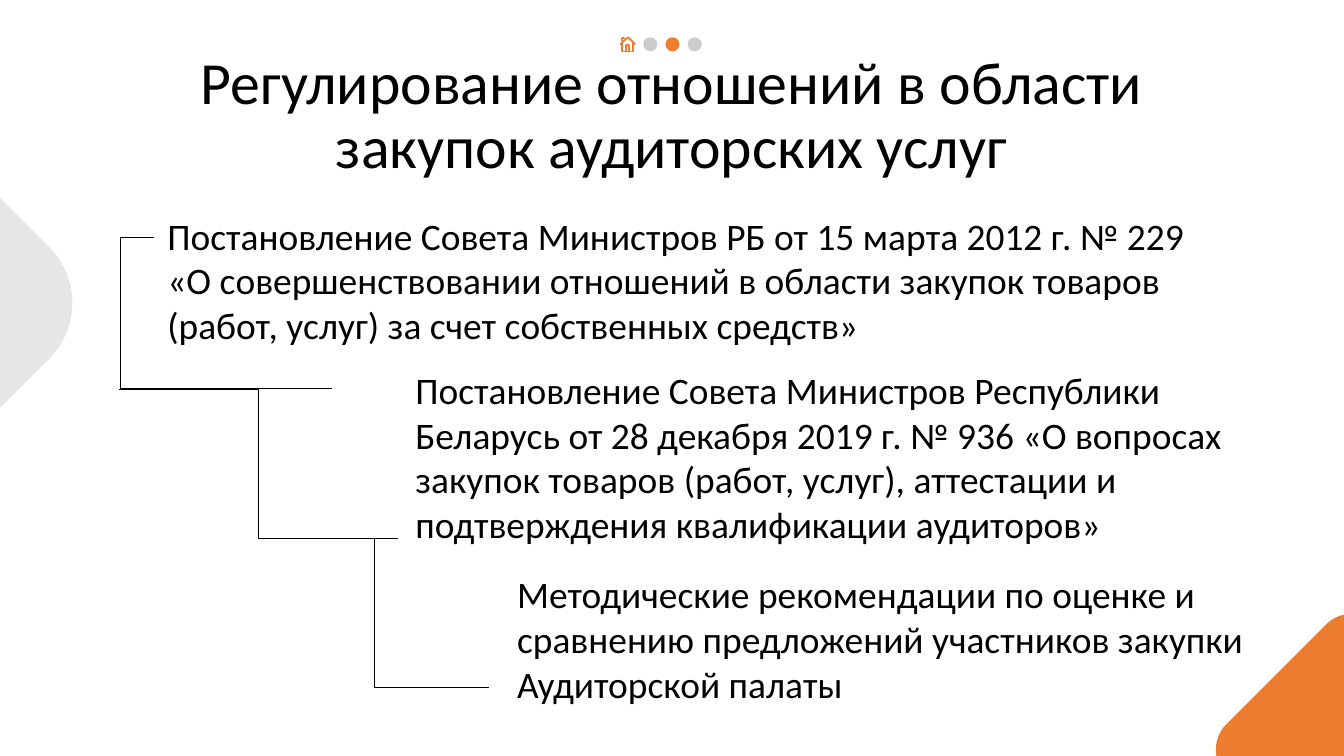
from lxml import etree
from pptx import Presentation
from pptx.dml.color import RGBColor
from pptx.enum.shapes import MSO_CONNECTOR, MSO_SHAPE
from pptx.enum.text import MSO_ANCHOR, MSO_AUTO_SIZE, PP_ALIGN
from pptx.oxml.ns import qn
from pptx.util import Inches, Pt

ELBOW = MSO_CONNECTOR.ELBOW
ROUND, OVAL = MSO_SHAPE.ROUNDED_RECTANGLE, MSO_SHAPE.OVAL
TOP, LEFT, CENTER = MSO_ANCHOR.TOP, PP_ALIGN.LEFT, PP_ALIGN.CENTER
FIXED = MSO_AUTO_SIZE.NONE

COLORS = {"text": "000000", "accent": "ED7D31", "pale": "E7E6E6", "dot": "CCCCCC"}
FONT = "Calibri"

TITLE = "Регулирование отношений в области закупок аудиторских услуг"
# text, left, top, width, height, horizontal and vertical inset
STEPS = [
    (["Постановление Совета Министров РБ от 15 марта 2012 г. № 229",
      "«О совершенствовании отношений в области закупок товаров "
      "(работ, услуг) за счет собственных средств»"],
     (1.53, 1.98, 11.23, 0.77), (0.13, 0.13)),
    (["Постановление Совета Министров Республики Беларусь от 28 декабря "
      "2019 г. № 936 «О вопросах закупок товаров (работ, услуг), "
      "аттестации и подтверждения квалификации аудиторов»"],
     (3.99, 3.51, 8.94, 0.77), (0.13, 0.13)),
    (["Методические рекомендации по оценке и сравнению предложений "
      "участников закупки Аудиторской палаты"],
     (5.03, 5.62, 8.49, 1.45), (0.1, 0.05)),
]
# start, end, place of the bend as a share of the width
LINKS = [
    ((1.53, 2.36), (3.29, 3.85), -0.19),
    ((1.18, 3.86), (3.95, 5.34), 0.5),
    ((2.57, 5.34), (4.85, 6.82), 0.5),
]
# left, top, side, color
CORNERS = [(-4.62, 0.66, 4.69, "pale"), (12.35, 6.38, 2.11, "accent")]
DOTS = ["dot", "accent", "dot"]
DOT_LEFT, DOT_TOP, DOT_SIZE, DOT_STEP = 6.38, 0.37, 0.14, 0.22
# strokes of the home icon, in hundredths of an inch
HOME_AT = (6.15, 0.37)
HOME = [
    [(0, 7), (7.5, 0), (15, 7)],
    [(2, 6), (2, 14), (13, 14), (13, 6)],
    [(6, 14), (6, 8), (9, 8), (9, 14)],
    [(2, 4), (2, 1), (4, 1), (4, 2)],
]


def color(name):
    return RGBColor.from_string(COLORS[name])


def place(shape, box):
    shape.left, shape.top, shape.width, shape.height = map(Inches, box)


def write(shape, lines, size, align, inset):
    frame = shape.text_frame
    frame.text = "\n".join(lines)
    frame.word_wrap = True
    frame.auto_size = FIXED
    frame.vertical_anchor = TOP
    frame.margin_left = frame.margin_right = Inches(inset[0])
    frame.margin_top = frame.margin_bottom = Inches(inset[1])
    for para in frame.paragraphs:
        para.alignment = align
        for run in para.runs:
            run.font.name = FONT
            run.font.size = Pt(size)
            run.font.color.rgb = color("text")


def add_solid(slide, kind, left, top, side, fill):
    shape = slide.shapes.add_shape(kind, *map(Inches, (left, top, side, side)))
    shape.shadow.inherit = False
    shape.fill.solid()
    shape.fill.fore_color.rgb = color(fill)
    shape.line.fill.background()
    return shape


def add_link(slide, start, end, bend):
    link = slide.shapes.add_connector(ELBOW, *map(Inches, start + end))
    link.line.color.rgb = color("text")
    link.line.width = Pt(0.75)
    props = link._element.spPr
    etree.SubElement(props, qn("a:effectLst"))
    geom = props.find(qn("a:prstGeom"))
    guides = geom.find(qn("a:avLst"))
    if guides is None:
        guides = etree.SubElement(geom, qn("a:avLst"))
    etree.SubElement(guides, qn("a:gd"), name="adj1",
                     fmla=f"val {round(bend * 100000)}")


def add_home(slide):
    first, *rest = HOME
    pen = slide.shapes.build_freeform(*first[0], scale=Inches(0.01))
    pen.add_line_segments(first[1:], close=False)
    for stroke in rest:
        pen.move_to(*stroke[0])
        pen.add_line_segments(stroke[1:], close=False)
    icon = pen.convert_to_shape(*map(Inches, HOME_AT))
    icon.shadow.inherit = False
    icon.fill.background()
    icon.line.color.rgb = color("accent")
    icon.line.width = Pt(1.25)


def main():
    deck = Presentation()
    deck.slide_width, deck.slide_height = Inches(13.33), Inches(7.5)
    slide = deck.slides.add_slide(deck.slide_layouts[5])

    # Corner shapes
    for left, top, side, fill in CORNERS:
        add_solid(slide, ROUND, left, top, side, fill).rotation = 315

    # Title
    title = slide.shapes.title
    place(title, (1.05, 0.39, 11.23, 0.91))
    write(title, [TITLE], 42.7, CENTER, (0.13, 0.13))
    title.text_frame.paragraphs[0].line_spacing = 0.9

    # Steps and the links between them
    for lines, box, inset in STEPS:
        text = slide.shapes.add_textbox(*map(Inches, box))
        write(text, lines, 26.7, LEFT, inset)
    for start, end, bend in LINKS:
        add_link(slide, start, end, bend)

    # Page marks
    for i, fill in enumerate(DOTS):
        add_solid(slide, OVAL, DOT_LEFT + i * DOT_STEP, DOT_TOP, DOT_SIZE, fill)
    add_home(slide)

    deck.save("out.pptx")


if __name__ == "__main__":
    main()
